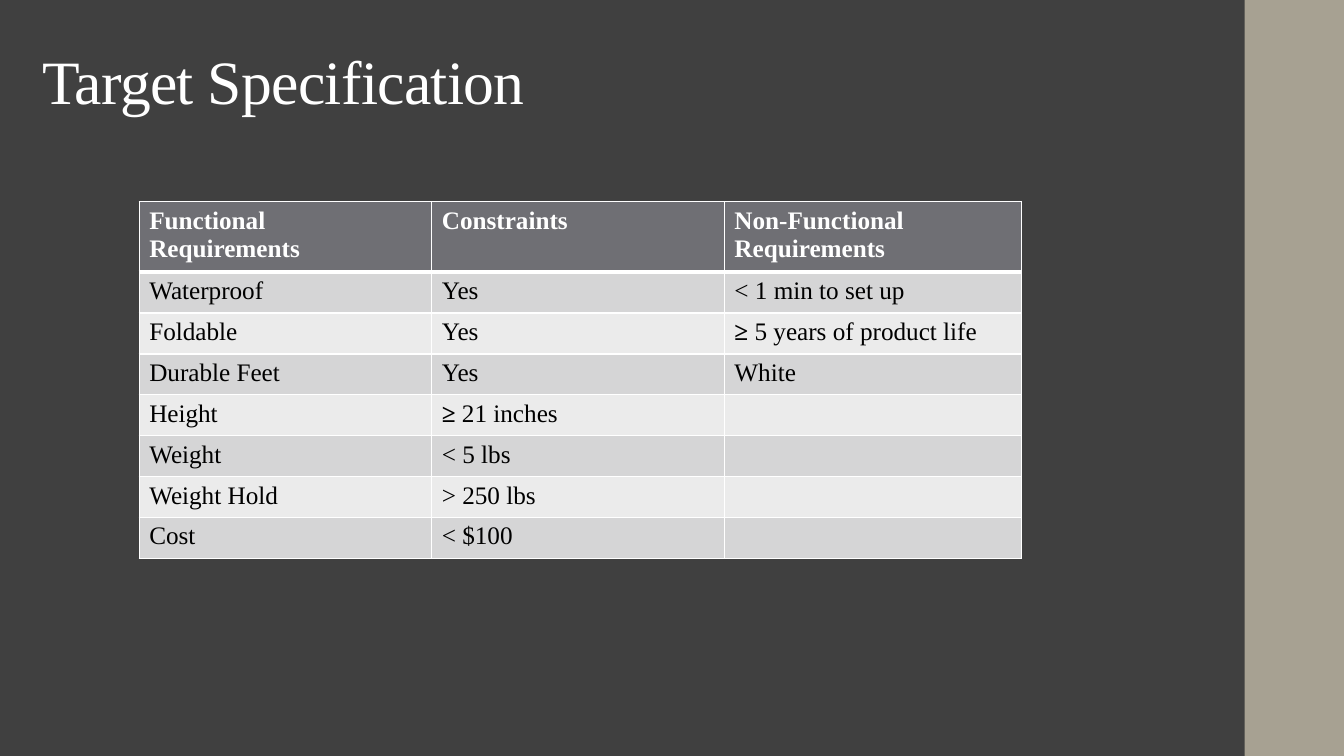
import dataclasses

import lxml.etree
import pptx
import pptx.dml.color
import pptx.enum.shapes
import pptx.enum.text
import pptx.oxml.ns
import pptx.util

Pt = pptx.util.Pt


@dataclasses.dataclass(frozen=True)
class Theme:
    font: str = "Times New Roman"
    background: str = "404040"
    side_band: str = "A7A192"
    light_text: str = "FFFFFF"
    dark_text: str = "000000"
    header_fill: str = "6F6F74"
    row_fills: tuple = ("D5D5D6", "EBEBEB")
    border: str = "FFFFFF"
    title_size: float = 44
    table_size: float = 18
    thin_line: float = 1
    thick_line: float = 3


class SlideBuilder:
    def __init__(self, slide, theme):
        self.slide = slide
        self.theme = theme

    def paint(self, fill, color):
        fill.solid()
        fill.fore_color.rgb = pptx.dml.color.RGBColor.from_string(color)

    def format_run(self, run, size, color, bold=False):
        run.font.name = self.theme.font
        run.font.size = Pt(size)
        run.font.bold = bold
        run.font.color.rgb = pptx.dml.color.RGBColor.from_string(color)

    def background(self):
        self.paint(self.slide.background.fill, self.theme.background)

    def band(self, left, top, width, height):
        shape = self.slide.shapes.add_shape(
            pptx.enum.shapes.MSO_SHAPE.RECTANGLE, Pt(left), Pt(top), Pt(width), Pt(height))
        shape.shadow.inherit = False
        self.paint(shape.fill, self.theme.side_band)
        shape.line.fill.background()

    def title(self, text, left, top, width, height):
        box = self.slide.shapes.add_textbox(Pt(left), Pt(top), Pt(width), Pt(height))
        frame = box.text_frame
        frame.word_wrap = True
        frame.vertical_anchor = pptx.enum.text.MSO_ANCHOR.MIDDLE
        frame.text = text
        paragraph = frame.paragraphs[0]
        paragraph.line_spacing = 0.9
        run = paragraph.runs[0]
        self.format_run(run, self.theme.title_size, self.theme.light_text)
        run.font._element.set("spc", "-50")

    def cell_borders(self, cell, top, bottom):
        properties = cell._tc.get_or_add_tcPr()
        thin = self.theme.thin_line
        for side, width in (("L", thin), ("R", thin), ("T", top), ("B", bottom)):
            line = lxml.etree.SubElement(
                properties, pptx.oxml.ns.qn(f"a:ln{side}"), w=str(Pt(width)))
            fill = lxml.etree.SubElement(line, pptx.oxml.ns.qn("a:solidFill"))
            lxml.etree.SubElement(fill, pptx.oxml.ns.qn("a:srgbClr"), val=self.theme.border)

    def cell_text(self, cell, text, color, bold):
        paragraph = cell.text_frame.paragraphs[0]
        # The "at least" sign and its space are bold
        sign = text[:2] if text.startswith("≥") else ""
        for part, heavy in ((sign, True), (text[len(sign):], bold)):
            if part:
                run = paragraph.add_run()
                run.text = part
                self.format_run(run, self.theme.table_size, color, heavy)

    def table(self, rows, left, top, column_widths, row_height):
        theme = self.theme
        table = self.slide.shapes.add_table(
            len(rows), len(column_widths), Pt(left), Pt(top),
            Pt(sum(column_widths)), Pt(row_height * len(rows))).table
        table.first_row = True
        table.horz_banding = False
        for column, width in zip(table.columns, column_widths):
            column.width = Pt(width)
        for index, texts in enumerate(rows):
            table.rows[index].height = Pt(row_height)
            header = index == 0
            fill = theme.header_fill if header else theme.row_fills[(index - 1) % 2]
            color = theme.light_text if header else theme.dark_text
            top_line = theme.thick_line if index == 1 else theme.thin_line
            bottom_line = theme.thick_line if header else theme.thin_line
            for cell, text in zip(table.rows[index].cells, texts):
                self.cell_borders(cell, top_line, bottom_line)
                self.paint(cell.fill, fill)
                self.cell_text(cell, text, color, header)


SPECIFICATION = [
    ("Functional Requirements", "Constraints", "Non-Functional Requirements"),
    ("Waterproof", "Yes", "< 1 min to set up"),
    ("Foldable", "Yes", "≥ 5 years of product life"),
    ("Durable Feet", "Yes", "White"),
    ("Height", "≥ 21 inches", ""),
    ("Weight", "< 5 lbs", ""),
    ("Weight Hold", "> 250 lbs", ""),
    ("Cost", "< $100", ""),
]


def main():
    presentation = pptx.Presentation()
    presentation.slide_width = Pt(960)
    presentation.slide_height = Pt(540)
    slide = presentation.slides.add_slide(presentation.slide_layouts[6])
    builder = SlideBuilder(slide, Theme())

    # Backdrop and side band
    builder.background()
    builder.band(889, 0, 72, 540)

    # Heading
    builder.title("Target Specification", 23, 8, 828, 104.4)

    # Requirements table
    builder.table(SPECIFICATION, 99.4, 144, (209, 209, 212.4), 29.2)

    presentation.save("out.pptx")


if __name__ == "__main__":
    main()
